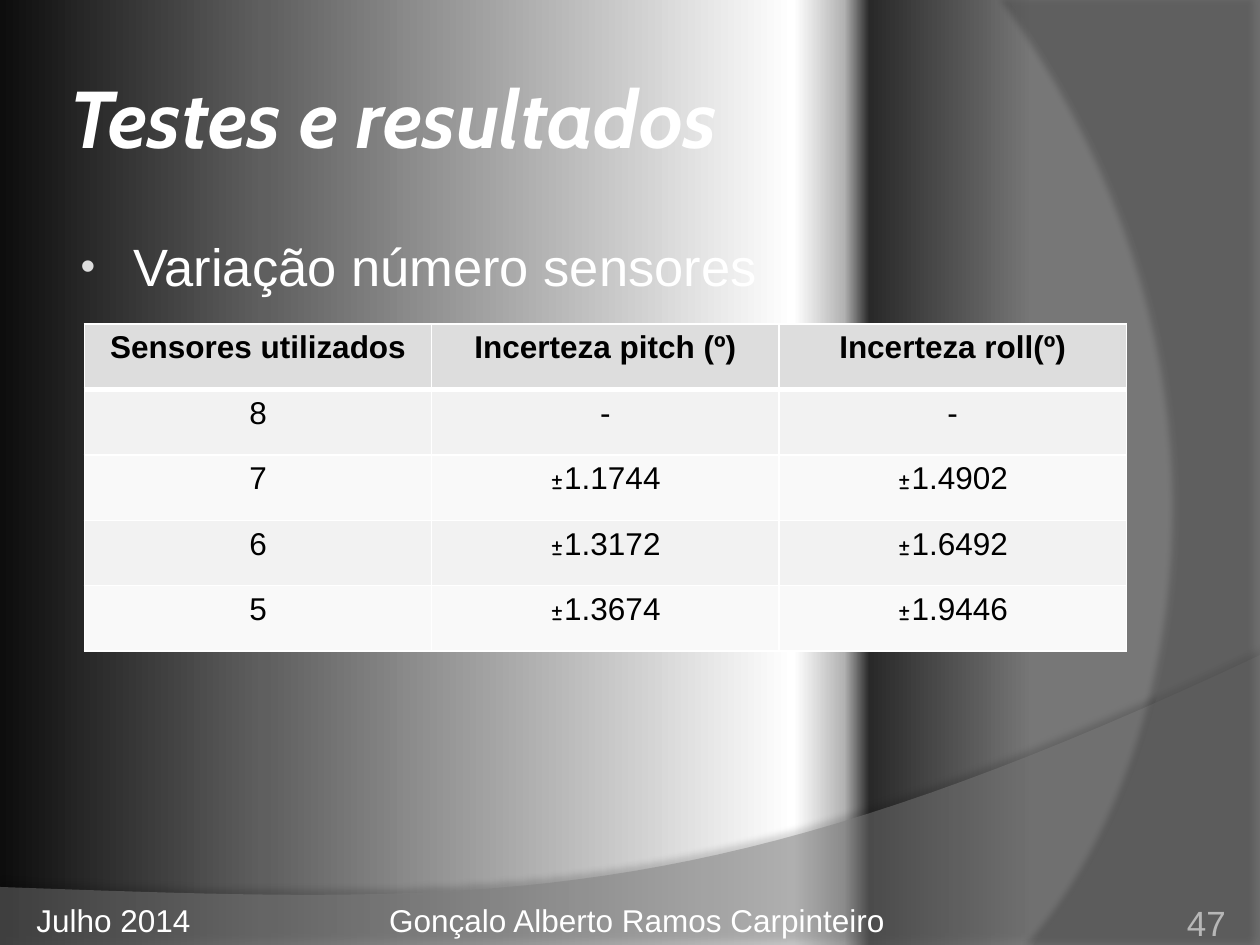
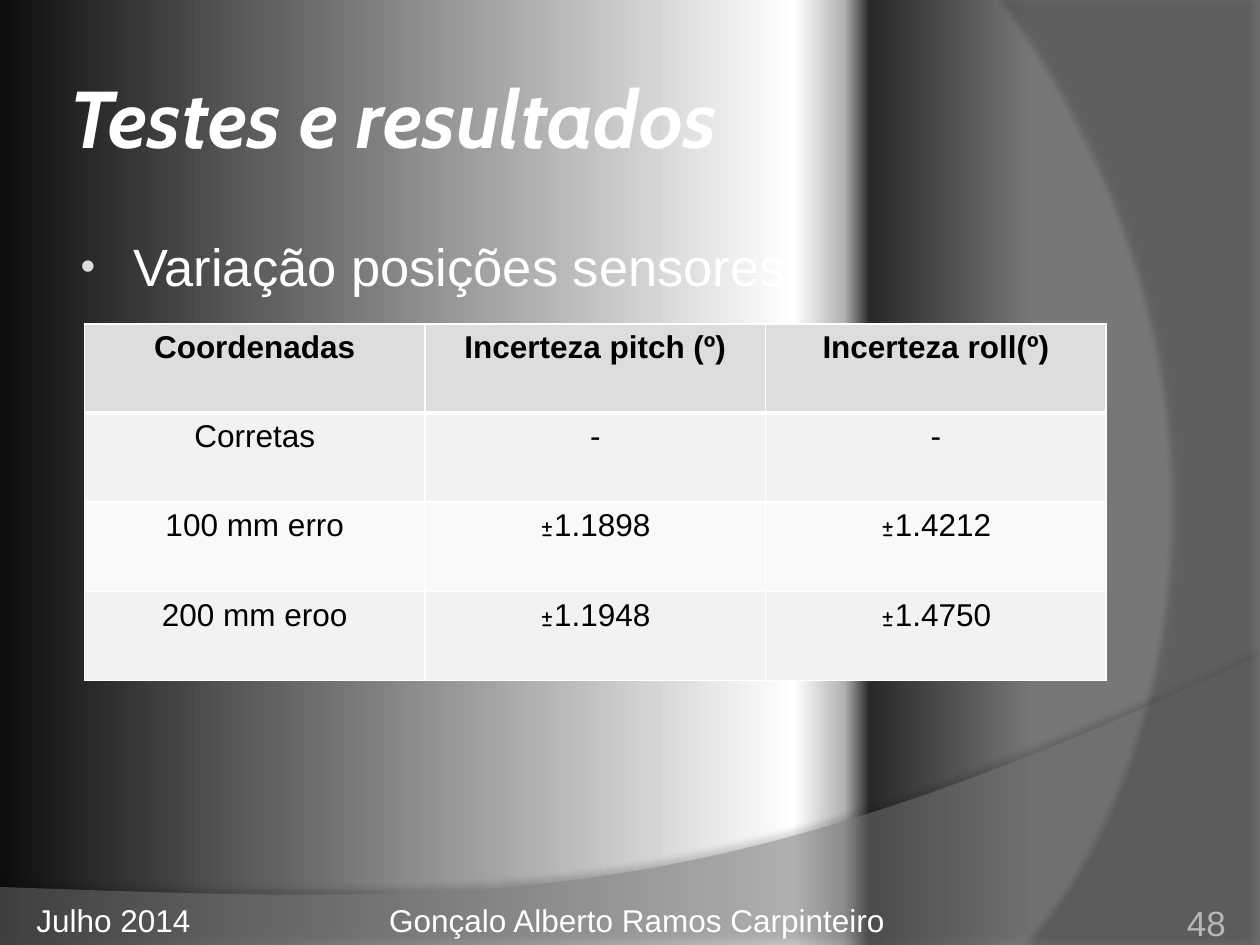
import lxml.etree
import pptx
import pptx.dml.color
import pptx.enum.text
import pptx.oxml
import pptx.oxml.ns
import pptx.util

COLUMNS, ROWS = 100, 75
SLIDE_WIDTH, SLIDE_HEIGHT = pptx.util.Inches(10), pptx.util.Inches(7.5)

WHITE, BLACK = "FFFFFF", "000000"
BULLET_COLOUR, NUMBER_COLOUR = "DDDDDD", "B7B7B7"
HEADER_FILL, ROW_FILLS = "DDDDDD", ("F2F2F2", "F9F9F9")
BACKGROUND_STOPS = ((0, "0D0D0D"), (21, "5F5F5F"), (63, "FFFFFF"),
                    (67, "B2B2B2"), (69, "292929"), (82, "777777"))
TITLE_FONT, TEXT_FONT, SYMBOL_FONT = "Cabin", "Arial", "Comic Neue"

# Boxes are left, top, width and height in grid columns and rows.
TITLE_BOX = (5, 3, 81.7, 12.5)
BODY_BOX = (5, 17.5, 81.7, 49.5)
DATE_BOX = (0, 71, 16.1, 4)
AUTHOR_BOX = (29.9, 71, 46.9, 4)
NUMBER_BOX = (71.7, 70.9, 25.6, 4)
WAVE_BOX = (0, 52, 100, 23)
ARC_BOX = (80, 0, 20, 75)

LEFT = pptx.enum.text.PP_ALIGN.LEFT
CENTER = pptx.enum.text.PP_ALIGN.CENTER
RIGHT = pptx.enum.text.PP_ALIGN.RIGHT


def colour(value):
    return pptx.dml.color.RGBColor.from_string(value)


def grid_box(box):
    """Turn a box in grid units into slide lengths."""
    left, top, width, height = box
    return (round(left * SLIDE_WIDTH / COLUMNS), round(top * SLIDE_HEIGHT / ROWS),
            round(width * SLIDE_WIDTH / COLUMNS), round(height * SLIDE_HEIGHT / ROWS))


def place(shape, box):
    shape.left, shape.top, shape.width, shape.height = grid_box(box)


def add_element(parent, tag, **attributes):
    element = lxml.etree.SubElement(parent, pptx.oxml.ns.qn(tag))
    for name, value in attributes.items():
        element.set(name, str(value))
    return element


def write(paragraph, text, font=TEXT_FONT, size=18, fill=WHITE, bold=False,
          italic=False, align=LEFT):
    paragraph.alignment = align
    run = paragraph.add_run()
    run.text = text
    run.font.name = font
    run.font.size = pptx.util.Pt(size)
    run.font.bold = bold
    run.font.italic = italic
    run.font.color.rgb = colour(fill)


def set_background(master):
    fill = master.background.fill
    fill.gradient()
    fill.gradient_angle = 0
    stops = next(master.element.iter(pptx.oxml.ns.qn("a:gsLst")))
    for stop in list(stops):
        stops.remove(stop)
    for position, value in BACKGROUND_STOPS:
        stop = add_element(stops, "a:gs", pos=position * 1000)
        add_element(stop, "a:srgbClr", val=value)


def curve_points(start, control_1, control_2, end, steps=40):
    """Sample a cubic curve, without its start."""
    points = []
    for step in range(1, steps + 1):
        t = step / steps
        weights = ((1 - t) ** 3, 3 * t * (1 - t) ** 2, 3 * t ** 2 * (1 - t), t ** 3)
        corners = (start, control_1, control_2, end)
        points.append(tuple(sum(weight * corner[axis] for weight, corner
                                in zip(weights, corners)) for axis in (0, 1)))
    return points


def add_veil(slide, box, corners, curve, fill, opacity, shadow):
    """Draw a translucent outline behind the text; points are shares of the box."""
    left, top, width, height = grid_box(box)
    points = [(round(left + x * width), round(top + y * height))
              for x, y in corners + curve_points(*curve)]
    builder = slide.shapes.build_freeform(*points[0])
    builder.add_line_segments(points[1:], close=True)
    shape = builder.convert_to_shape()
    shape.line.fill.background()
    shape.fill.solid()
    shape.fill.fore_color.rgb = colour(fill)
    properties = shape.element.spPr
    fill_colour = properties.find(".//" + pptx.oxml.ns.qn("a:srgbClr"))
    add_element(fill_colour, "a:alpha", val=opacity * 1000)

    shadow_opacity, distance, angle = shadow
    effects = add_element(properties, "a:effectLst")
    outer = add_element(effects, "a:outerShdw", blurRad=pptx.util.Pt(4),
                        dist=pptx.util.Pt(distance), dir=angle * 60000,
                        algn="ctr", rotWithShape=0)
    shade = add_element(outer, "a:srgbClr", val=BLACK)
    add_element(shade, "a:alpha", val=shadow_opacity * 1000)
    return shape


def add_veils(slide):
    wave = add_veil(slide, WAVE_BOX, [(0, 0.8), (0, 1), (1, 1), (1, 0)],
                    ((1, 0), (0.56, 0.9), (0.39, 0.86), (0, 0.8)),
                    "7F7F7F", 45, (35, 3.5, 270))
    arc = add_veil(slide, ARC_BOX, [(1, 0), (1, 1), (0.1, 1)],
                   ((0.1, 1), (0.68, 0.83), (1.09, 0.4), (0, 0)),
                   "5E5E5E", 40, (45, 4, 180))
    tree = wave.element.getparent()
    for index, shape in enumerate((wave, arc)):
        tree.insert(2 + index, shape.element)


def fill_title(slide, text):
    title = slide.shapes.title
    place(title, TITLE_BOX)
    frame = title.text_frame
    frame.auto_size = pptx.enum.text.MSO_AUTO_SIZE.NONE
    frame.vertical_anchor = pptx.enum.text.MSO_ANCHOR.MIDDLE
    frame.margin_left = frame.margin_right = pptx.util.Inches(0.05)
    write(frame.paragraphs[0], text, font=TITLE_FONT, size=46, bold=True, italic=True)


def fill_body(slide, text):
    body = slide.placeholders[1]
    place(body, BODY_BOX)
    frame = body.text_frame
    frame.auto_size = pptx.enum.text.MSO_AUTO_SIZE.NONE
    frame.margin_top = pptx.util.Inches(0.11)
    paragraph = frame.paragraphs[0]
    paragraph.space_before = pptx.util.Pt(0)
    properties = paragraph._p.get_or_add_pPr()
    properties.set("marL", str(pptx.util.Inches(0.46)))
    properties.set("indent", str(pptx.util.Inches(-0.42)))
    bullet_colour = add_element(properties, "a:buClr")
    add_element(bullet_colour, "a:srgbClr", val=BULLET_COLOUR)
    add_element(properties, "a:buSzPct", val=80000)
    add_element(properties, "a:buFont", typeface=TEXT_FONT)
    add_element(properties, "a:buChar", char="•")
    write(paragraph, text, size=30)


def add_text(slide, box, text, margin=None, anchor=None, **text_format):
    frame = slide.shapes.add_textbox(*grid_box(box)).text_frame
    frame.word_wrap = True
    if margin is not None:
        frame.margin_left = frame.margin_right = margin
        frame.margin_top = frame.margin_bottom = margin
    if anchor is not None:
        frame.vertical_anchor = anchor
    write(frame.paragraphs[0], text, **text_format)


def add_footer(slide, number):
    add_text(slide, AUTHOR_BOX, "Gonçalo Alberto Ramos Carpinteiro")
    add_text(slide, NUMBER_BOX, str(number), margin=0, size=20, fill=NUMBER_COLOUR,
             align=RIGHT, anchor=pptx.enum.text.MSO_ANCHOR.BOTTOM)
    add_text(slide, DATE_BOX, "Julho 2014", align=RIGHT)


def set_borders(cell, top, bottom):
    properties = cell._tc.get_or_add_tcPr()
    widths = (("a:lnL", 1), ("a:lnR", 1), ("a:lnT", top), ("a:lnB", bottom))
    for index, (tag, width) in enumerate(widths):
        line = add_element(properties, tag, w=pptx.util.Pt(width))
        solid = add_element(line, "a:solidFill")
        add_element(solid, "a:srgbClr", val=WHITE)
        properties.insert(index, line)


def write_cell(cell, text, row):
    header = row == 0
    cell.fill.solid()
    cell.fill.fore_color.rgb = colour(HEADER_FILL if header else ROW_FILLS[(row - 1) % 2])
    set_borders(cell, top=3 if row == 1 else 1, bottom=3 if header else 1)
    text_format = {"fill": BLACK, "bold": header, "align": CENTER}
    paragraph = cell.text_frame.paragraphs[0]
    if text.startswith("±"):
        write(paragraph, "±", font=SYMBOL_FONT, **text_format)
        text = text[1:]
    write(paragraph, text, **text_format)


def add_result_table(slide, box, records):
    left, top, width, height = grid_box(box)
    table = slide.shapes.add_table(len(records), len(records[0]),
                                   left, top, width, height).table
    for row, record in enumerate(records):
        for column, text in enumerate(record):
            write_cell(table.cell(row, column), text, row)


def add_result_slide(presentation, number, topic, table_box, records):
    slide = presentation.slides.add_slide(presentation.slide_layouts[1])
    add_veils(slide)
    fill_title(slide, "Testes e resultados")
    fill_body(slide, topic)
    add_footer(slide, number)
    add_result_table(slide, table_box, records)


def main():
    presentation = pptx.Presentation()
    presentation.slide_width, presentation.slide_height = SLIDE_WIDTH, SLIDE_HEIGHT
    set_background(presentation.slide_master)
    uncertainties = ("Incerteza pitch (º)", "Incerteza roll(º)")
    add_result_slide(presentation, 47, "Variação número sensores", (6.7, 25.7, 82.7, 26), [
        ("Sensores utilizados", *uncertainties),
        ("8", "-", "-"),
        ("7", "±1.1744", "±1.4902"),
        ("6", "±1.3172", "±1.6492"),
        ("5", "±1.3674", "±1.9446"),
    ])
    add_result_slide(presentation, 48, "Variação posições sensores", (6.7, 25.7, 81.1, 28.3), [
        ("Coordenadas", *uncertainties),
        ("Corretas", "-", "-"),
        ("100 mm erro", "±1.1898", "±1.4212"),
        ("200 mm eroo", "±1.1948", "±1.4750"),
    ])
    presentation.save("out.pptx")


if __name__ == "__main__":
    main()
